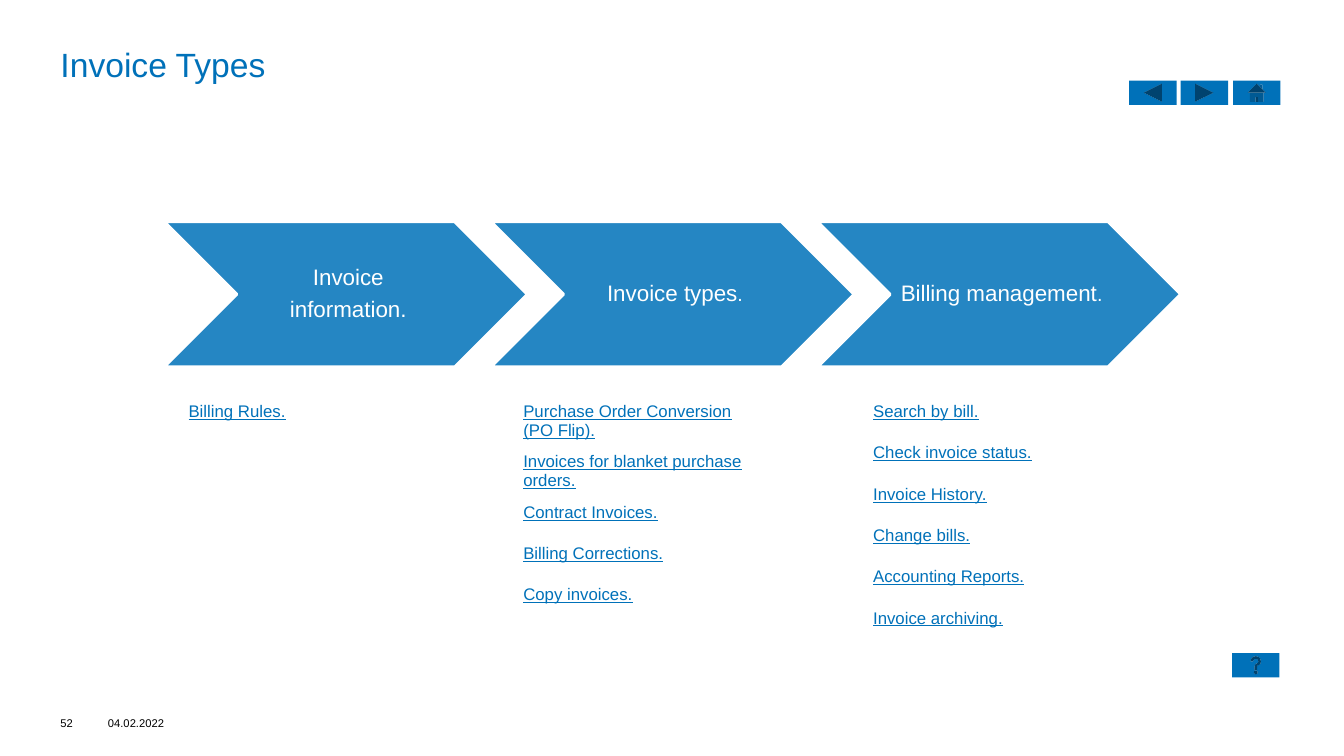
from pptx import Presentation
from pptx.dml.color import RGBColor
from pptx.enum.shapes import MSO_SHAPE as SHAPE
from pptx.enum.text import MSO_ANCHOR as ANCHOR, PP_ALIGN as ALIGN
from pptx.util import Inches, Pt

BLUE = RGBColor(0x00, 0x71, 0xB9)
STEP_BLUE = RGBColor(0x25, 0x86, 0xC3)
WHITE = RGBColor(0xFF, 0xFF, 0xFF)
BLACK = RGBColor(0x00, 0x00, 0x00)


def style(run, size, color):
    run.font.name = "Arial"
    run.font.size = Pt(size)
    run.font.color.rgb = color


def add_text(left, top, width, height, anchor, margins=(0, 0, 0, 0)):
    box = slide.shapes.add_textbox(
        Inches(left), Inches(top), Inches(width), Inches(height))
    frame = box.text_frame
    frame.word_wrap = True
    frame.vertical_anchor = anchor
    (frame.margin_left, frame.margin_top,
     frame.margin_right, frame.margin_bottom) = map(Inches, margins)
    return frame


prs = Presentation()
prs.slide_width = Inches(13.33)
prs.slide_height = Inches(7.5)
slide = prs.slides.add_slide(prs.slide_layouts[6])

captions = [
    ("Invoice Types", 0.6, 0.44, 12.12, 0.47, ANCHOR.TOP, 24, BLUE),
    ("52", 0.6, 6.85, 0.39, 0.39, ANCHOR.BOTTOM, 8, BLACK),
    ("04.02.2022", 1.07, 6.85, 0.71, 0.39, ANCHOR.BOTTOM, 8, BLACK),
]
for wording, left, top, width, height, anchor, size, color in captions:
    caption = add_text(left, top, width, height, anchor)
    caption.text = wording
    style(caption.paragraphs[0].runs[0], size, color)

steps = [
    [[("Invoice", 16)], [("information.", 16)]],
    [[("Invoice types", 16), (".", 14)]],
    [[("Billing management", 16), (".", 14)]],
]
for index, lines in enumerate(steps):
    left = 1.63 + 3.24 * index
    chevron = slide.shapes.add_shape(
        SHAPE.CHEVRON, Inches(left), Inches(2.2), Inches(3.6), Inches(1.44))
    chevron.shadow.inherit = False
    chevron.fill.solid()
    chevron.fill.fore_color.rgb = STEP_BLUE
    chevron.line.color.rgb = WHITE
    chevron.line.width = Pt(2)

    label = add_text(left + 0.72, 2.2, 2.16, 1.44, ANCHOR.MIDDLE,
                     (0.07, 0.02, 0.02, 0.02))
    for number, pieces in enumerate(lines):
        paragraph = label.add_paragraph() if number else label.paragraphs[0]
        paragraph.alignment = ALIGN.CENTER
        paragraph.line_spacing = 0.9
        paragraph.space_after = Pt(6)
        for wording, size in pieces:
            run = paragraph.add_run()
            run.text = wording
            style(run, size, WHITE)

topic_lists = [
    (1.77, ["Billing Rules."]),
    (5.09, ["Purchase Order Conversion (PO Flip).",
            "Invoices for blanket purchase orders.",
            "Contract Invoices.",
            "Billing Corrections.",
            "Copy invoices."]),
    (8.56, ["Search by bill.",
            "Check invoice status.",
            "Invoice History.",
            "Change bills.",
            "Accounting Reports.",
            "Invoice archiving."]),
]
for left, topics in topic_lists:
    topic_table = slide.shapes.add_table(
        len(topics), 1, Inches(left), Inches(3.94),
        Inches(2.6), Inches(0.41) * len(topics)).table
    topic_table.first_row = False
    topic_table.horz_banding = False
    for row, topic in enumerate(topics):
        cell = topic_table.cell(row, 0)
        cell.fill.background()
        cell.text = topic
        run = cell.text_frame.paragraphs[0].runs[0]
        style(run, 12, BLUE)
        run.font.underline = True

buttons = [
    (SHAPE.ACTION_BUTTON_FORWARD_OR_NEXT, 11.71, 0.8),
    (SHAPE.ACTION_BUTTON_BACK_OR_PREVIOUS, 11.2, 0.8),
    (SHAPE.ACTION_BUTTON_HOME, 12.23, 0.8),
    (SHAPE.ACTION_BUTTON_HELP, 12.22, 6.48),
]
for kind, left, top in buttons:
    button = slide.shapes.add_shape(
        kind, Inches(left), Inches(top), Inches(0.47), Inches(0.24))
    button.shadow.inherit = False
    button.fill.solid()
    button.fill.fore_color.rgb = BLUE
    button.line.fill.background()

prs.save("out.pptx")
